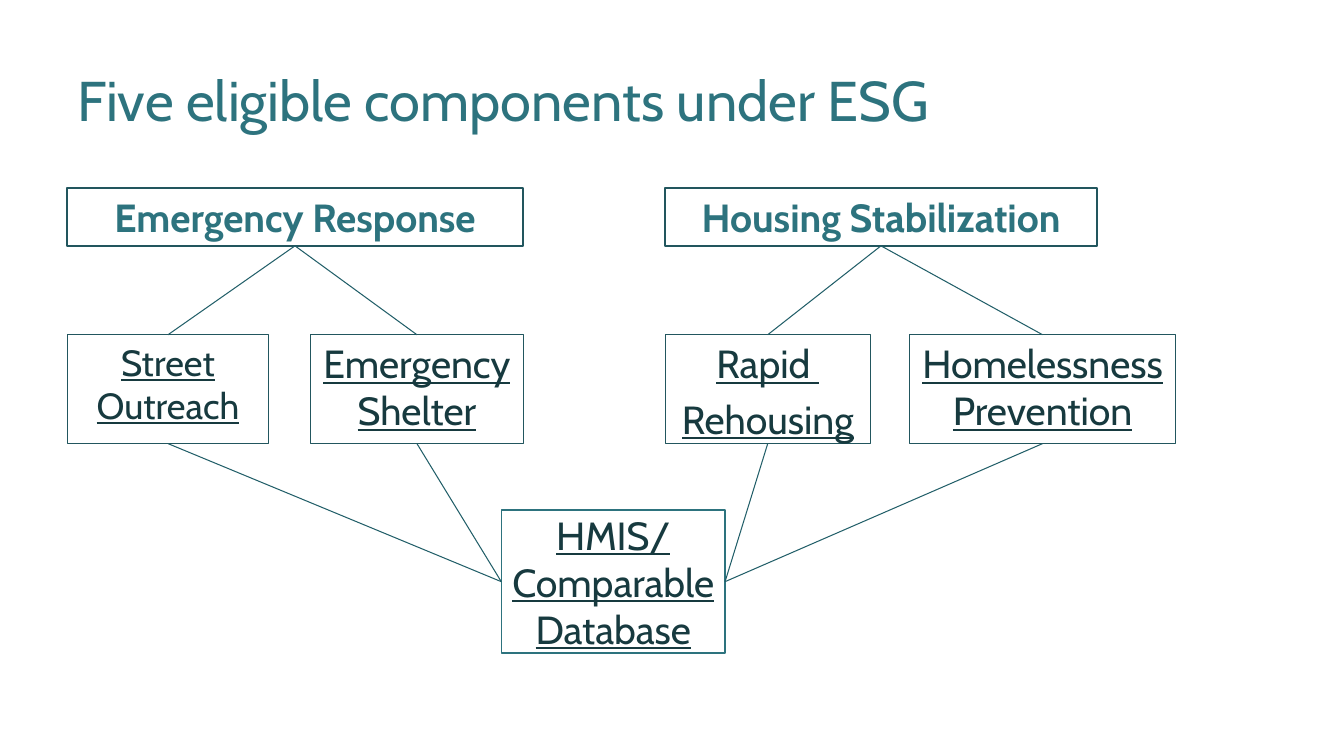
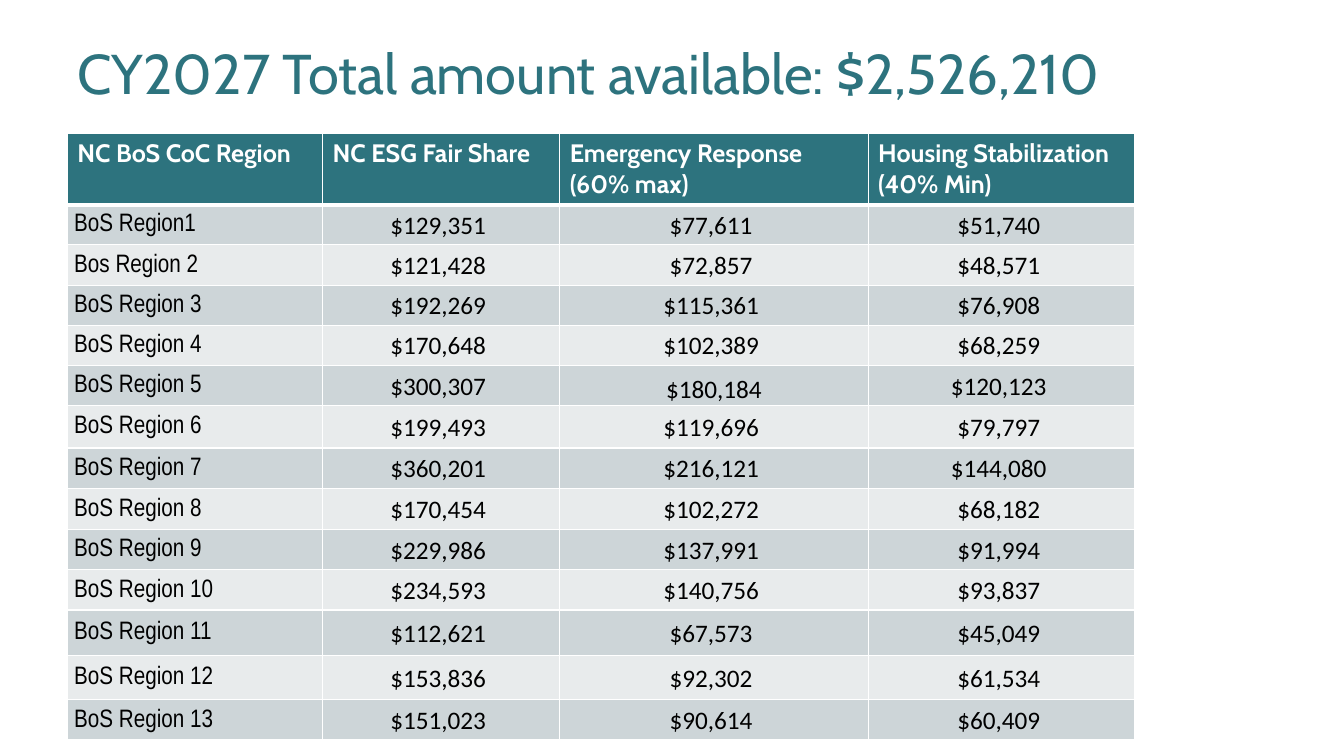
from dataclasses import dataclass
from lxml import etree
from pptx import Presentation
from pptx.dml.color import RGBColor
from pptx.enum.shapes import MSO_CONNECTOR, MSO_SHAPE
from pptx.enum.text import MSO_ANCHOR, MSO_AUTO_SIZE, PP_ALIGN
from pptx.oxml.ns import qn
from pptx.util import Inches, Pt

LEFT, CENTER = PP_ALIGN.LEFT, PP_ALIGN.CENTER
TOP, MIDDLE, BOTTOM = MSO_ANCHOR.TOP, MSO_ANCHOR.MIDDLE, MSO_ANCHOR.BOTTOM
RECT, STRAIGHT = MSO_SHAPE.RECTANGLE, MSO_CONNECTOR.STRAIGHT
NO_FIT = MSO_AUTO_SIZE.NONE
TITLE_ONLY = 5
# Connection sites of a rectangle
UPPER, WEST, LOWER, EAST = range(4)


@dataclass(frozen=True)
class Theme:
    teal: str = "2D737E"
    edge: str = "22565E"
    link: str = "215E68"
    ink: str = "173A3F"
    black: str = "000000"
    white: str = "FFFFFF"
    bands: tuple = ("CDD5D8", "E8EBEC")
    font: str = "Cabin"
    label: str = "Arial Narrow"
    number: str = "Calibri"
    title: int = 40
    box: int = 28
    small: int = 26
    cell: int = 18


THEME = Theme()

# Grid: 20 columns by 25 rows
WIDTH, HEIGHT = Inches(13.333), Inches(7.5)
MARGIN = 1
TITLE_W = 16.5

# Table content
HEADS = [
    ["NC BoS CoC Region"],
    ["NC ESG Fair Share"],
    ["Emergency Response", "(60% max)"],
    ["Housing Stabilization (40% Min)"],
]
REGIONS = [
    ("BoS Region1", "$129,351 ", "$77,611 ", "$51,740 "),
    ("Bos Region 2", "$121,428 ", "$72,857 ", "$48,571 "),
    ("BoS Region 3", "$192,269 ", "$115,361 ", "$76,908 "),
    ("BoS Region 4", "$170,648 ", "$102,389 ", "$68,259 "),
    ("BoS Region 5", "$300,307 ", "$180,184", "$120,123 "),
    ("BoS Region 6", "$199,493 ", "$119,696 ", "$79,797 "),
    ("BoS Region 7", "$360,201 ", "$216,121 ", "$144,080 "),
    ("BoS Region 8", "$170,454 ", "$102,272 ", "$68,182 "),
    ("BoS Region 9", "$229,986 ", "$137,991 ", "$91,994 "),
    ("BoS Region 10", "$234,593 ", "$140,756 ", "$93,837 "),
    ("BoS Region 11", "$112,621 ", "$67,573 ", "$45,049 "),
    ("BoS Region 12", "$153,836 ", "$92,302 ", "$61,534 "),
    ("BoS Region 13", "$151,023 ", "$90,614 ", "$60,409 "),
]
COL_W = [3.8, 3.53, 4.59, 3.97]
HEAD_H, ROW_H = 2.37, 1.33
TALL = {6: 1.4, 8: 1.37, 11: 1.5, 12: 1.47}
LOW_CELL = (5, 2)


def cols(n):
    return round(WIDTH * n / 20)


def rows(n):
    return round(HEIGHT * n / 25)


def rgb(code):
    return RGBColor.from_string(code)


def write(frame, lines, size, color, font=THEME.font, align=LEFT,
          gap=0, space=None, **style):
    """Put one run in each paragraph of a text frame."""
    for i, line in enumerate(lines):
        para = frame.add_paragraph() if i else frame.paragraphs[0]
        para.alignment = align
        para.space_before = Pt(gap if i else 0)
        if space:
            para.line_spacing = space
        run = para.add_run()
        run.text = line
        run.font.size, run.font.name = Pt(size), font
        run.font.color.rgb = rgb(color)
        for key, value in style.items():
            setattr(run.font, key, value)


def add_slide(deck, text, top, height):
    slide = deck.slides.add_slide(deck.slide_layouts[TITLE_ONLY])
    title = slide.shapes.title
    title.left, title.top = cols(MARGIN), rows(top)
    title.width, title.height = cols(TITLE_W), rows(height)
    frame = title.text_frame
    frame.auto_size, frame.word_wrap = NO_FIT, True
    frame.vertical_anchor = BOTTOM
    frame.margin_left = frame.margin_right = frame.margin_bottom = Inches(0.1)
    frame.margin_top = Inches(0.05)
    write(frame, [text], THEME.title, THEME.teal)
    return slide


def add_box(slide, x, y, w, h, lines, size=THEME.box, color=THEME.ink,
            edge=THEME.edge, weight=0.75, fill=None, anchor=TOP, **style):
    box = slide.shapes.add_shape(RECT, cols(x), rows(y), cols(w), rows(h))
    box.shadow.inherit = False
    if fill:
        box.fill.solid()
        box.fill.fore_color.rgb = rgb(fill)
    else:
        box.fill.background()
    box.line.color.rgb, box.line.width = rgb(edge), Pt(weight)
    frame = box.text_frame
    frame.word_wrap, frame.vertical_anchor = True, anchor
    write(frame, lines, size, color, align=CENTER, **style)
    return box


def link(slide, start, out, end, into):
    line = slide.shapes.add_connector(STRAIGHT, 0, 0, 0, 0)
    line.begin_connect(start, out)
    line.end_connect(end, into)
    line.line.color.rgb, line.line.width = rgb(THEME.link), Pt(0.75)
    etree.SubElement(line._element.spPr, qn("a:effectLst"))


def set_edges(cell, **widths):
    """Draw white cell borders, 1 point wide unless given by side."""
    props = cell._tc.get_or_add_tcPr()
    for i, side in enumerate("LRTB"):
        edge = etree.Element(qn("a:ln" + side), w=str(Pt(widths.get(side, 1))))
        fill = etree.SubElement(edge, qn("a:solidFill"))
        etree.SubElement(fill, qn("a:srgbClr"), val=THEME.white)
        props.insert(i, edge)


def paint(cell, color, **widths):
    cell.fill.solid()
    cell.fill.fore_color.rgb = rgb(color)
    set_edges(cell, **widths)


def fill_head(cell, lines):
    paint(cell, THEME.teal, B=3)
    write(cell.text_frame, lines, THEME.cell, THEME.white, bold=True)


def fill_cell(cell, text, row, col):
    paint(cell, THEME.bands[(row - 1) % 2], T=3 if row == 1 else 1)
    cell.margin_left = cell.margin_right = Inches(0.07)
    cell.margin_top = cell.margin_bottom = 0
    low = (row, col) == LOW_CELL
    cell.vertical_anchor = BOTTOM if low else MIDDLE
    write(cell.text_frame, [text], THEME.cell, THEME.black,
          font=THEME.number if col else THEME.label,
          align=CENTER if col else LEFT,
          space=None if low else 1.06, bold=False)


def build_parts(deck):
    slide = add_slide(deck, "Five eligible components under ESG", 1, 3.73)

    # Shared database at the foot
    base = add_box(slide, 7.46, 16.87, 3.33, 4.73,
                   ["HMIS/", "Comparable Database"], edge=THEME.teal, weight=1,
                   fill=THEME.white, anchor=MIDDLE, underline=True)

    # Each group: left, width, name, side of the database, then its parts
    groups = [
        (1, 6.78, "Emergency Response", WEST, [
            (1, 3, ["Street Outreach"], THEME.small),
            (4.62, 3.17, ["Emergency Shelter"], THEME.box)]),
        (9.9, 6.42, "Housing Stabilization", EAST, [
            (9.9, 3.05, ["Rapid ", "Rehousing"], THEME.box),
            (13.53, 3.97, ["Homelessness Prevention"], THEME.box)]),
    ]
    for x, w, name, side, parts in groups:
        head = add_box(slide, x, 6.23, w, 1.9, [name], color=THEME.teal,
                       weight=1.5, bold=True)
        for left, wide, lines, size in parts:
            part = add_box(slide, left, 11.07, wide, 3.6, lines, size,
                           gap=5.8, underline=True)
            link(slide, head, LOWER, part, UPPER)
            link(slide, base, side, part, LOWER)


def build_shares(deck):
    slide = add_slide(deck, "CY2027 Total amount available: $2,526,210",
                      0.5, 3.33)
    heights = [HEAD_H] + [TALL.get(i, ROW_H)
                          for i in range(1, len(REGIONS) + 1)]
    table = slide.shapes.add_table(
        len(heights), len(COL_W), cols(MARGIN), rows(4.4),
        cols(sum(COL_W)), rows(sum(heights))).table
    table.horz_banding = False
    for col, wide in zip(table.columns, COL_W):
        col.width = cols(wide)
    for row, high in zip(table.rows, heights):
        row.height = rows(high)

    # Header row, then one row for each region
    for c, lines in enumerate(HEADS):
        fill_head(table.cell(0, c), lines)
    for r, region in enumerate(REGIONS, 1):
        for c, text in enumerate(region):
            fill_cell(table.cell(r, c), text, r, c)


def main():
    deck = Presentation()
    deck.slide_width, deck.slide_height = WIDTH, HEIGHT
    build_parts(deck)
    build_shares(deck)
    deck.save("out.pptx")


if __name__ == "__main__":
    main()
